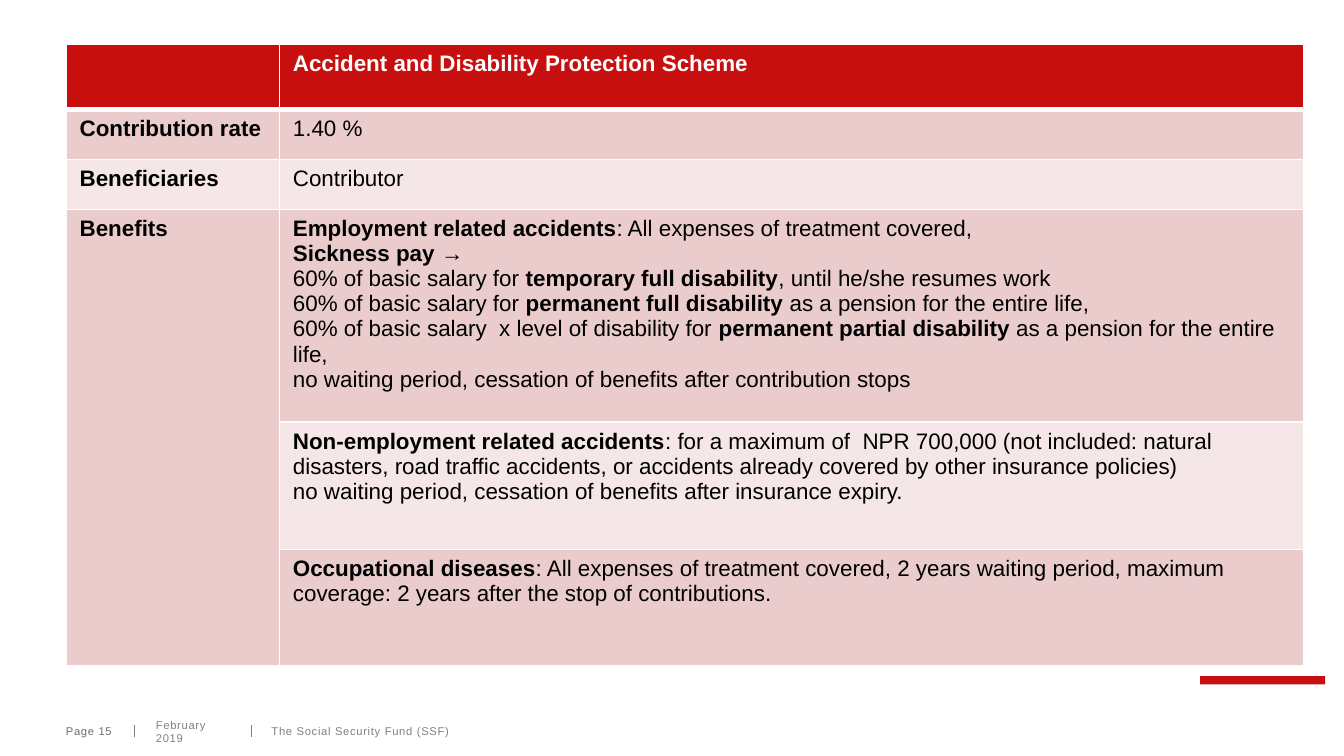
from lxml import etree
from pptx import Presentation
from pptx import util as u
from pptx.dml.color import RGBColor
from pptx.enum import shapes, text
from pptx.oxml.ns import qn

RED = RGBColor(0xC8, 0x0F, 0x0F)
ROSE = RGBColor(0xEB, 0xCC, 0xCC)
PALE = RGBColor(0xF5, 0xE7, 0xE7)
GRAY = RGBColor(0x80, 0x80, 0x80)
DARK = RGBColor(0x6F, 0x6F, 0x6F)
WHITE = RGBColor(0xFF, 0xFF, 0xFF)
BLACK = RGBColor(0, 0, 0)

deck = Presentation()
deck.slide_width = u.Inches(10)
deck.slide_height = deck.slide_width * 9 // 16
slide = deck.slides.add_slide(deck.slide_layouts[6])


def x(part):
    """Percent of the slide's width."""
    return int(deck.slide_width * part / 100)


def y(part):
    """Percent of the slide's height."""
    return int(deck.slide_height * part / 100)


# Red accent and footer
bar = slide.shapes.add_shape(shapes.MSO_SHAPE.RECTANGLE, x(89.3), y(89.45), x(9.3), y(1.07))
bar.shadow.inherit = False
bar.fill.solid()
bar.fill.fore_color.rgb = RED
bar.line.fill.background()

for left in (18.7, 10):
    rule = slide.shapes.add_connector(
        shapes.MSO_CONNECTOR.STRAIGHT, x(left), y(95.85), x(left), y(97.45))
    rule.line.color.rgb = GRAY
    rule.line.width = u.Pt(0.75)
    etree.SubElement(rule._element.spPr, qn("a:effectLst"))

for left, width, words, tint in (
    (11.6, 5.8, "February 2019", GRAY),
    (20.2, 63.2, "The Social Security Fund (SSF)", GRAY),
    (4.9, 4.9, "Page 15", DARK),
):
    frame = slide.shapes.add_textbox(x(left), y(95.85), x(width), y(1.78)).text_frame
    frame.word_wrap = True
    frame.vertical_anchor = text.MSO_ANCHOR.MIDDLE
    frame.margin_left = frame.margin_right = frame.margin_top = frame.margin_bottom = 0
    frame.text = words
    run = frame.paragraphs[0].runs[0]
    run.font.name, run.font.size = "Arial", u.Pt(6)
    run.font.color.rgb = tint
    run._r.get_or_add_rPr().set("spc", "36")

# Scheme table: stars switch bold on and off
rows = [
    (8.53, RED, "", "*Accident and Disability Protection Scheme*"),
    (6.65, ROSE, "*Contribution rate*", "1.40 %"),
    (6.65, PALE, "*Beneficiaries*", "Contributor"),
    (28.1, ROSE, "*Benefits*",
     "*Employment related accidents*: All expenses of treatment covered,\n"
     "*Sickness pay *→\n"
     "60% of basic salary for *temporary full disability*, until he/she resumes work\n"
     "60% of basic salary for *permanent full disability *as a pension for the entire life,\n"
     "60% of basic salary  x level of disability for *permanent partial disability *"
     "as a pension for the entire life,\n"
     "no waiting period, cessation of benefits after contribution stops"),
    (16.9, PALE, "",
     "*Non-employment related accidents*: for a maximum of  NPR 700,000 (not included: "
     "natural disasters, road traffic accidents, or accidents already covered by other "
     "insurance policies)\n"
     "no waiting period, cessation of benefits after insurance expiry."),
    (15.3, ROSE, "",
     "*Occupational diseases*: All expenses of treatment covered, 2 years waiting period, "
     "maximum coverage: 2 years after the stop of contributions."),
]
cols = (15.87, 76.25)
table = slide.shapes.add_table(
    len(rows), len(cols), x(4.93), y(5.9), x(sum(cols)), y(sum(r[0] for r in rows))).table
for col, width in zip(table.columns, cols):
    col.width = x(width)

for i, (height, fill, *cells) in enumerate(rows):
    table.rows[i].height = y(height)
    for j, words in enumerate(cells):
        cell = table.cell(i, j)
        for side in "LRTB":
            thick = 3 if (i, side) in ((0, "B"), (1, "T")) else 1
            edge = etree.SubElement(
                cell._tc.get_or_add_tcPr(), qn("a:ln" + side), w=str(u.Pt(thick)))
            paint = etree.SubElement(edge, qn("a:solidFill"))
            etree.SubElement(paint, qn("a:srgbClr"), val=str(WHITE))
        cell.fill.solid()
        cell.fill.fore_color.rgb = fill
        if not words:
            continue
        frame = cell.text_frame
        frame.text = words.replace("*", "")
        for para, line in zip(frame.paragraphs, words.split("\n")):
            para.clear()
            for k, part in enumerate(line.split("*")):
                if part:
                    run = para.add_run()
                    run.text = part
                    run.font.name, run.font.size = "Arial", u.Pt(12)
                    run.font.bold = k % 2 == 1
                    run.font.color.rgb = BLACK if i else WHITE

table.cell(3, 0).merge(table.cell(5, 0))
deck.save("out.pptx")
